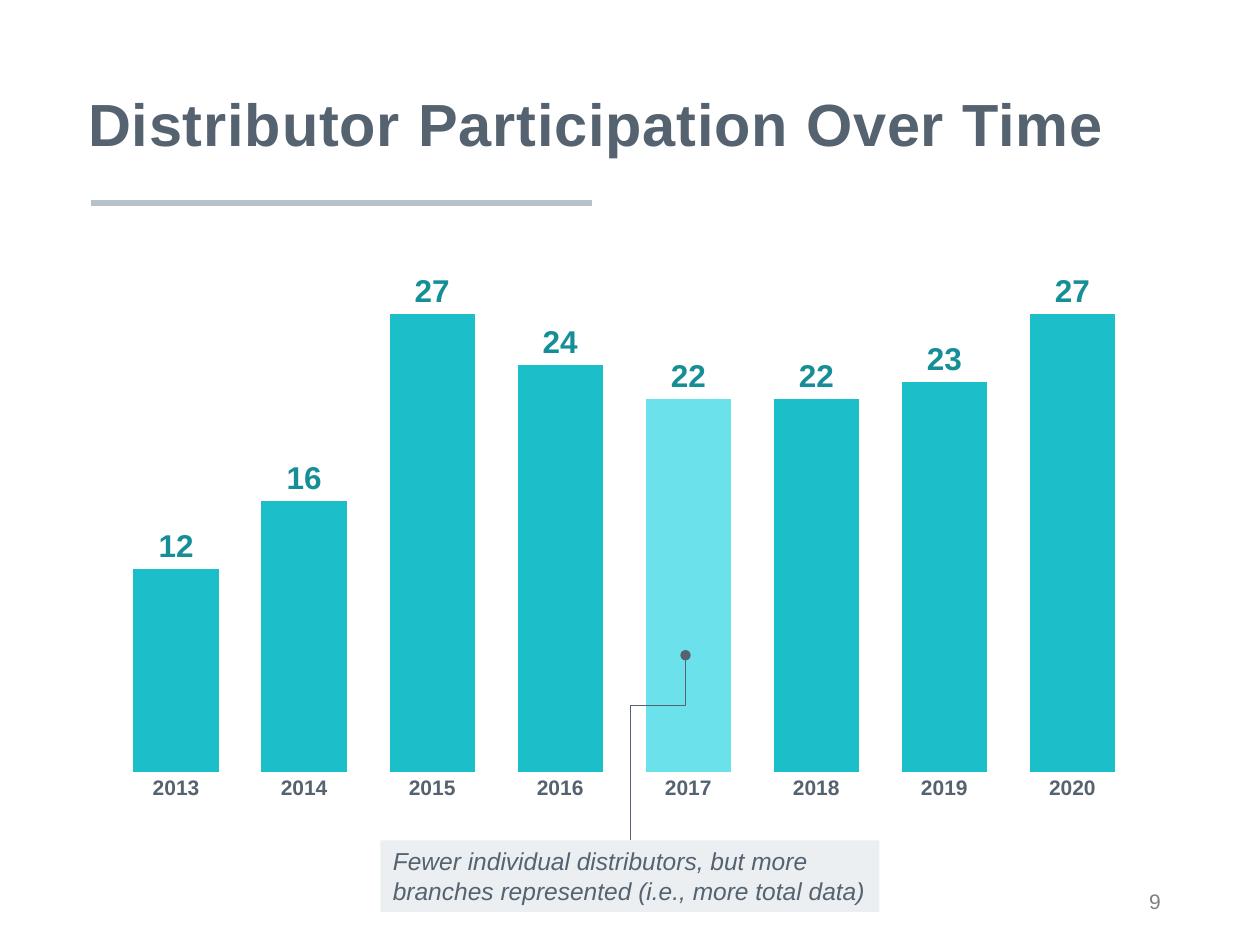
from lxml import etree
from pptx import Presentation
from pptx import util as u
from pptx.chart.data import CategoryChartData
from pptx.dml.color import RGBColor
from pptx.enum import chart as ch, shapes, text
from pptx.oxml.ns import qn

TITLE = "Distributor Participation Over Time"
PARTICIPATION = {"2013": 12, "2014": 16, "2015": 27, "2016": 24,
                 "2017": 22, "2018": 22, "2019": 23, "2020": 27}
HIGHLIGHT_YEAR = "2017"
CALLOUT = ("Fewer individual distributors, but more branches represented "
           "(i.e., more total data)")
PAGE_NUMBER = "9"

COLORS = {"slate": "556270", "rule": "B8C0C9", "bar": "1CBECA", "highlight": "6BE2EB",
          "value": "158E98", "callout": "DBE0E4", "number": "808080",
          "white": "FFFFFF", "black": "000000"}
FONT = "Arial"
LEFT, WIDTH = 1.83, 21.51
CALLOUT_BOX = (7.67, 16.94, 10.06, 1.45)
CALLOUT_DOT = (13.82, 13.21)
PLOT = {"x": 0.02, "y": 0.02, "w": 0.96, "h": 0.91}


def cm(*lengths):
    return [u.Cm(length) for length in lengths]


def color(name):
    return RGBColor.from_string(COLORS[name])


def format_font(font, size, name, bold=False, italic=False):
    font.name, font.size = FONT, u.Pt(size)
    font.bold, font.italic = bold, italic
    font.color.rgb = color(name)


def write(box, words, size, name, bold=False, italic=False,
          align=text.PP_ALIGN.LEFT, anchor=text.MSO_ANCHOR.MIDDLE, leading=None):
    frame = box.text_frame
    frame.word_wrap = True
    frame.auto_size = text.MSO_AUTO_SIZE.NONE
    frame.vertical_anchor = anchor
    para = frame.paragraphs[0]
    para.alignment = align
    if leading:
        para.line_spacing = u.Pt(leading)
    span = para.add_run()
    span.text = words
    format_font(span.font, size, name, bold, italic)
    return span


def add_line(page, kind, start, end, name, width):
    line = page.shapes.add_connector(kind, *cm(*start, *end))
    line.line.color.rgb = color(name)
    line.line.width = u.Pt(width)
    etree.SubElement(line._element.spPr, qn("a:effectLst"))
    return line


def add_riser(page, start, end, bend):
    """Draw an elbow that leaves start upwards, turns at bend and ends in a dot."""
    run, rise = end[0] - start[0], start[1] - end[1]
    x, y = (start[0] + end[0]) / 2, (start[1] + end[1]) / 2
    # A quarter turn swaps width and height around the shared centre.
    riser = add_line(page, shapes.MSO_CONNECTOR.ELBOW, (x + rise / 2, y + run / 2),
                     (x - rise / 2, y - run / 2), "slate", 0.5)
    properties = riser._element.spPr
    properties.find(qn("a:xfrm")).set("rot", str(90 * 60000))
    etree.SubElement(properties.find(qn("a:prstGeom")).find(qn("a:avLst")), qn("a:gd"),
                     name="adj1", fmla=f"val {round(bend * 100000)}")
    etree.SubElement(properties.find(qn("a:ln")), qn("a:tailEnd"), type="oval")


def fix_plot_area(chart):
    area = chart._chartSpace.chart.plotArea
    layout = area.find(qn("c:layout"))
    if layout is None:
        layout = etree.Element(qn("c:layout"))
        area.insert(0, layout)
    manual = etree.SubElement(layout, qn("c:manualLayout"))
    settings = {"layoutTarget": "inner", "xMode": "edge", "yMode": "edge", **PLOT}
    for tag, value in settings.items():
        etree.SubElement(manual, qn(f"c:{tag}"), val=str(value))


def add_column_chart(page):
    data = CategoryChartData()
    data.categories = list(PARTICIPATION)
    data.add_series("Series 1", list(PARTICIPATION.values()))
    chart = page.shapes.add_chart(ch.XL_CHART_TYPE.COLUMN_CLUSTERED,
                                  *cm(LEFT, 5.08, WIDTH, 11.28), data).chart
    chart.has_legend = chart.has_title = False
    format_font(chart.font, 10, "black")
    fix_plot_area(chart)

    values = chart.value_axis
    values.minimum_scale, values.maximum_scale = 0, 30
    values.has_major_gridlines = values.visible = False
    years = chart.category_axis
    years.major_tick_mark = ch.XL_TICK_MARK.NONE
    years.format.line.color.rgb = color("white")
    years.format.line.width = u.Pt(0.75)
    format_font(years.tick_labels.font, 12, "slate", bold=True)

    plot = chart.plots[0]
    plot.gap_width, plot.overlap, plot.vary_by_categories = 50, -27, False
    series = plot.series[0]
    highlight = series.points[list(PARTICIPATION).index(HIGHLIGHT_YEAR)]
    for part, name in ((series, "bar"), (highlight, "highlight")):
        part.format.fill.solid()
        part.format.fill.fore_color.rgb = color(name)
    labels = series.data_labels
    labels.show_value = True
    labels.position = ch.XL_LABEL_POSITION.OUTSIDE_END
    format_font(labels.font, 18, "value", bold=True)


def add_callout(page):
    box = page.shapes.add_shape(shapes.MSO_SHAPE.RECTANGLE, *cm(*CALLOUT_BOX))
    box.shadow.inherit = False
    box.line.fill.background()
    box.fill.solid()
    box.fill.fore_color.rgb = color("callout")
    fill = box._element.spPr.find(qn("a:solidFill"))
    etree.SubElement(fill[0], qn("a:alpha"), val="50000")
    write(box, CALLOUT, 14, "slate", italic=True, anchor=text.MSO_ANCHOR.TOP)
    left, top, width, _ = CALLOUT_BOX
    add_riser(page, (left + width / 2, top), CALLOUT_DOT, bend=0.73)


def main():
    deck = Presentation()
    deck.slide_width, deck.slide_height = cm(25.4, 19.05)
    page = deck.slides.add_slide(deck.slide_layouts[5])

    title = page.shapes.title
    title.left, title.top, title.width, title.height = cm(1.52, 0.76, WIDTH, 3.33)
    span = write(title, TITLE, 34, "slate", bold=True, leading=44)
    span.font._element.set("spc", "50")
    add_line(page, shapes.MSO_CONNECTOR.STRAIGHT, (LEFT, 4.09), (11.94, 4.09), "rule", 3)

    add_column_chart(page)
    add_callout(page)
    number = page.shapes.add_textbox(*cm(17.93, 17.65, 5.72, 1.02))
    write(number, PAGE_NUMBER, 12, "number", align=text.PP_ALIGN.RIGHT)
    deck.save("out.pptx")


if __name__ == "__main__":
    main()
